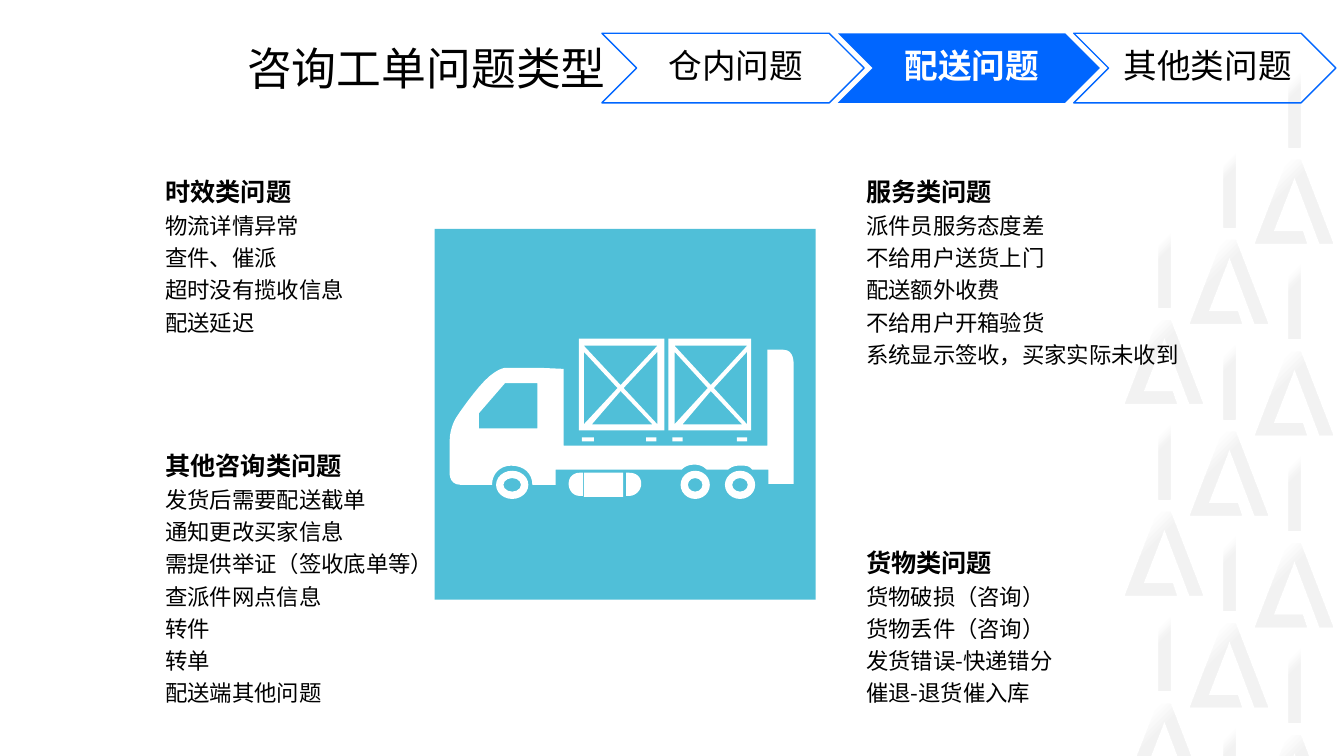
import pptx
import pptx.dml.color
import pptx.enum.shapes
import pptx.enum.text
import pptx.oxml.ns
import pptx.util
from lxml import etree
from pptx.util import Inches

FONT = "Noto Sans CJK SC"
BLACK, WHITE, BLUE, TEAL, GREY = "000000", "FFFFFF", "0066FF", "50BFD8", "F2F2F2"
PRESET = pptx.enum.shapes.MSO_SHAPE
ALIGN = pptx.enum.text.PP_ALIGN
ANCHOR = pptx.enum.text.MSO_ANCHOR
AUTO_SIZE = pptx.enum.text.MSO_AUTO_SIZE

STEPS = [("仓内问题", False), ("配送问题", True), ("其他类问题", False)]
TOPICS = [
    (1.64, 1.75, 2.94, 1.6, "时效类问题",
     ["物流详情异常", "查件、催派", "超时没有揽收信息", "配送延迟"]),
    (1.64, 4.47, 2.94, 2.56, "其他咨询类问题",
     ["发货后需要配送截单", "通知更改买家信息", "需提供举证（签收底单等）",
      "查派件网点信息", "转件", "转单", "配送端其他问题"]),
    (8.59, 1.75, 3.27, 1.92, "服务类问题",
     ["派件员服务态度差", "不给用户送货上门", "配送额外收费", "不给用户开箱验货",
      "系统显示签收，买家实际未收到"]),
    (8.59, 5.43, 2.94, 1.6, "货物类问题",
     ["货物破损（咨询）", "货物丢件（咨询）", "发货错误-快递错分", "催退-退货催入库"]),
]

# Outlines: a pair is a straight step, six numbers are a cubic curve.
TRUCK_BODY = [
    (7.77, 3.47), (7.61, 3.47), (7.61, 4.42), (5.59, 4.42), (5.59, 3.66), (5.37, 3.65),
    (5.01, 3.65), (5.01, 3.65, 4.91, 3.65, 4.75, 3.84), (4.6, 4.02, 4.52, 4.15, 4.52, 4.15),
    (4.52, 4.15, 4.46, 4.25, 4.46, 4.37), (4.46, 4.67), (4.46, 4.67, 4.44, 4.81, 4.57, 4.81),
    (4.88, 4.81), (4.88, 4.7, 4.96, 4.62, 5.07, 4.62), (5.2, 4.62, 5.28, 4.7, 5.28, 4.81),
    (5.51, 4.81), (5.51, 4.66), (6.76, 4.66), (6.8, 4.62, 6.84, 4.61, 6.89, 4.61),
    (6.93, 4.61, 6.97, 4.62, 7.01, 4.66), (7.22, 4.66), (7.27, 4.62, 7.3, 4.62, 7.35, 4.62),
    (7.4, 4.62, 7.43, 4.62, 7.46, 4.66), (7.62, 4.66), (7.62, 4.8), (7.87, 4.8),
    (7.87, 3.61), (7.87, 3.61, 7.88, 3.47, 7.77, 3.47),
]
CAB_WINDOW = [(5.33, 4.25), (4.75, 4.25), (4.75, 4.1), (5.01, 3.8), (5.33, 3.8)]
TANK_RIGHT = [(6.24, 4.69), (6.21, 4.69), (6.21, 4.92), (6.24, 4.92),
              (6.31, 4.92, 6.36, 4.86, 6.36, 4.8), (6.36, 4.73, 6.31, 4.69, 6.24, 4.69)]
TANK_LEFT = [(5.75, 4.69), (5.78, 4.69), (5.78, 4.92), (5.75, 4.92),
             (5.68, 4.92, 5.64, 4.86, 5.64, 4.8), (5.64, 4.73, 5.69, 4.69, 5.75, 4.69)]


def rgb(value):
    return pptx.dml.color.RGBColor.from_string(value)


def paint(shape, fill=None, line=None):
    shape.shadow.inherit = False
    if fill:
        shape.fill.solid()
        shape.fill.fore_color.rgb = rgb(fill)
    else:
        shape.fill.background()
    if line:
        shape.line.color.rgb = rgb(line)
        shape.line.width = pptx.util.Pt(1)
    else:
        shape.line.fill.background()


def paint_fade(shape):
    paint(shape)
    shape.fill.gradient()
    shape.fill.gradient_angle = 315
    for stop, position, color in zip(shape.fill.gradient_stops, (0.2, 0.4), (WHITE, GREY)):
        stop.position = position
        stop.color.rgb = rgb(color)


def add_preset(page, kind, left, top, width, height, fill=None, line=None):
    shape = page.shapes.add_shape(
        kind, Inches(left), Inches(top), Inches(width), Inches(height))
    paint(shape, fill, line)
    return shape


def flatten(outline):
    """Turn an outline with curves into a list of points in EMU."""
    points = []
    for step in outline:
        if len(step) == 2:
            points.append(step)
            continue
        knots = [points[-1], step[:2], step[2:4], step[4:]]
        for t in (n / 8 for n in range(1, 9)):
            weights = ((1 - t) ** 3, 3 * t * (1 - t) ** 2, 3 * t * t * (1 - t), t ** 3)
            points.append(tuple(sum(w * knot[axis] for w, knot in zip(weights, knots))
                                for axis in (0, 1)))
    return [(Inches(x), Inches(y)) for x, y in points]


def add_outline(page, *outlines):
    """Draw one freeform; outlines after the first cut holes in it."""
    first, *holes = [flatten(outline) for outline in outlines]
    builder = page.shapes.build_freeform(*first[0], scale=1.0)
    builder.add_line_segments(first[1:], close=True)
    for hole in holes:
        builder.move_to(*hole[0])
        builder.add_line_segments(hole[1:], close=True)
    shape = builder.convert_to_shape()
    paint(shape, WHITE)
    return shape


def add_span(para, text, size, color=BLACK, bold=False):
    span = para.add_run()
    span.text = text
    span.font.size = pptx.util.Pt(size)
    span.font.bold = bold
    span.font.color.rgb = rgb(color)
    span.font.name = FONT
    east_asian = etree.SubElement(span._r.get_or_add_rPr(), pptx.oxml.ns.qn("a:ea"))
    east_asian.set("typeface", FONT)


def set_margins(frame, left, top, right, bottom):
    frame.margin_left, frame.margin_top = Inches(left), Inches(top)
    frame.margin_right, frame.margin_bottom = Inches(right), Inches(bottom)


def add_backdrop(page):
    """Three staggered columns of fading bars and letter-like triangles."""
    for column in range(3):
        left = 11.49 + 0.645 * column
        for row in range(4):
            top = 2.22 - 0.795 * column + 1.903 * row
            if top < 7.5:
                paint_fade(add_preset(page, PRESET.RECTANGLE, left, top, 0.12, 0.83))
            x, y = left - 0.33, top + 0.955
            if y < 7.5:
                paint_fade(add_outline(page, [
                    (x + dx, y + dy) for dx, dy in (
                        (0.45, 0), (0.32, 0), (0, 0.83), (0.51, 0.83), (0.47, 0.71),
                        (0.18, 0.71), (0.39, 0.17), (0.64, 0.83), (0.77, 0.83))]))


def add_crate(page, left, right, inner_left, inner_right):
    middle = (inner_left + inner_right) / 2
    add_outline(
        page,
        [(right, 3.36), (left, 3.36), (left, 4.27), (right, 4.27)],
        [(inner_left, 3.49), (middle - 0.03, 3.85), (inner_left, 4.21)],
        [(inner_left + 0.08, 4.21), (middle, 3.88), (inner_right - 0.05, 4.21)],
        [(inner_right, 4.21), (middle + 0.03, 3.85), (inner_right, 3.49)],
        [(middle, 3.82), (inner_left, 3.43), (inner_right, 3.43)])


def add_truck(page):
    add_preset(page, PRESET.RECTANGLE, 4.31, 2.27, 3.78, 3.68, TEAL)
    add_outline(page, TRUCK_BODY, CAB_WINDOW)
    add_crate(page, 5.74, 6.59, 5.79, 6.52)
    add_crate(page, 6.63, 7.45, 6.69, 7.41)
    for left, width in ((4.92, 0.32), (6.75, 0.29), (7.19, 0.3)):
        wheel = add_preset(page, PRESET.DONUT, left, 4.67, width, 0.28, WHITE)
        wheel.adjustments[0] = 0.26
    for left, width in ((5.77, 0.12), (6.41, 0.1), (6.67, 0.1), (7.31, 0.1)):
        add_preset(page, PRESET.RECTANGLE, left, 4.34, width, 0.04, WHITE)
    add_outline(page, TANK_LEFT)
    add_preset(page, PRESET.RECTANGLE, 5.79, 4.69, 0.39, 0.24, WHITE)
    add_outline(page, TANK_RIGHT)


def add_topic(page, left, top, width, height, heading, items):
    box = page.shapes.add_textbox(Inches(left), Inches(top), Inches(width), Inches(height))
    frame = box.text_frame
    frame.word_wrap = True
    frame.auto_size = AUTO_SIZE.SHAPE_TO_FIT_TEXT
    set_margins(frame, 0, 0, 0, 0)
    add_span(frame.paragraphs[0], heading, 18, bold=True)
    for item in items:
        para = frame.add_paragraph()
        para.line_spacing = 1.2
        add_span(para, item, 16)


def set_title(page, text):
    title = page.shapes.title
    title.left, title.top = Inches(2.34), Inches(0.41)
    title.width, title.height = Inches(3.77), Inches(0.72)
    frame = title.text_frame
    frame.auto_size = AUTO_SIZE.NONE
    frame.vertical_anchor = ANCHOR.TOP
    para = frame.paragraphs[0]
    para.alignment = ALIGN.RIGHT
    para.line_spacing = 0.9
    add_span(para, text, 32)


def add_step(page, left, text, active):
    chevron = add_preset(page, PRESET.CHEVRON, left, 0.33, 2.6, 0.69,
                         BLUE if active else None, None if active else BLUE)
    frame = chevron.text_frame
    frame.word_wrap = True
    frame.vertical_anchor = ANCHOR.MIDDLE
    set_margins(frame, 0.1, 0.04, 0.04, 0.04)
    para = frame.paragraphs[0]
    para.alignment = ALIGN.CENTER
    para.line_spacing = 0.9
    add_span(para, text, 24, WHITE if active else BLACK, active)


def main():
    deck = pptx.Presentation()
    deck.slide_width, deck.slide_height = Inches(13.33), Inches(7.5)
    page = deck.slides.add_slide(deck.slide_layouts[5])
    set_title(page, "咨询工单问题类型")
    add_backdrop(page)
    for topic in TOPICS:
        add_topic(page, *topic)
    add_truck(page)
    for index, (text, active) in enumerate(STEPS):
        add_step(page, 5.97 + 2.34 * index, text, active)
    deck.save("out.pptx")


if __name__ == "__main__":
    main()
